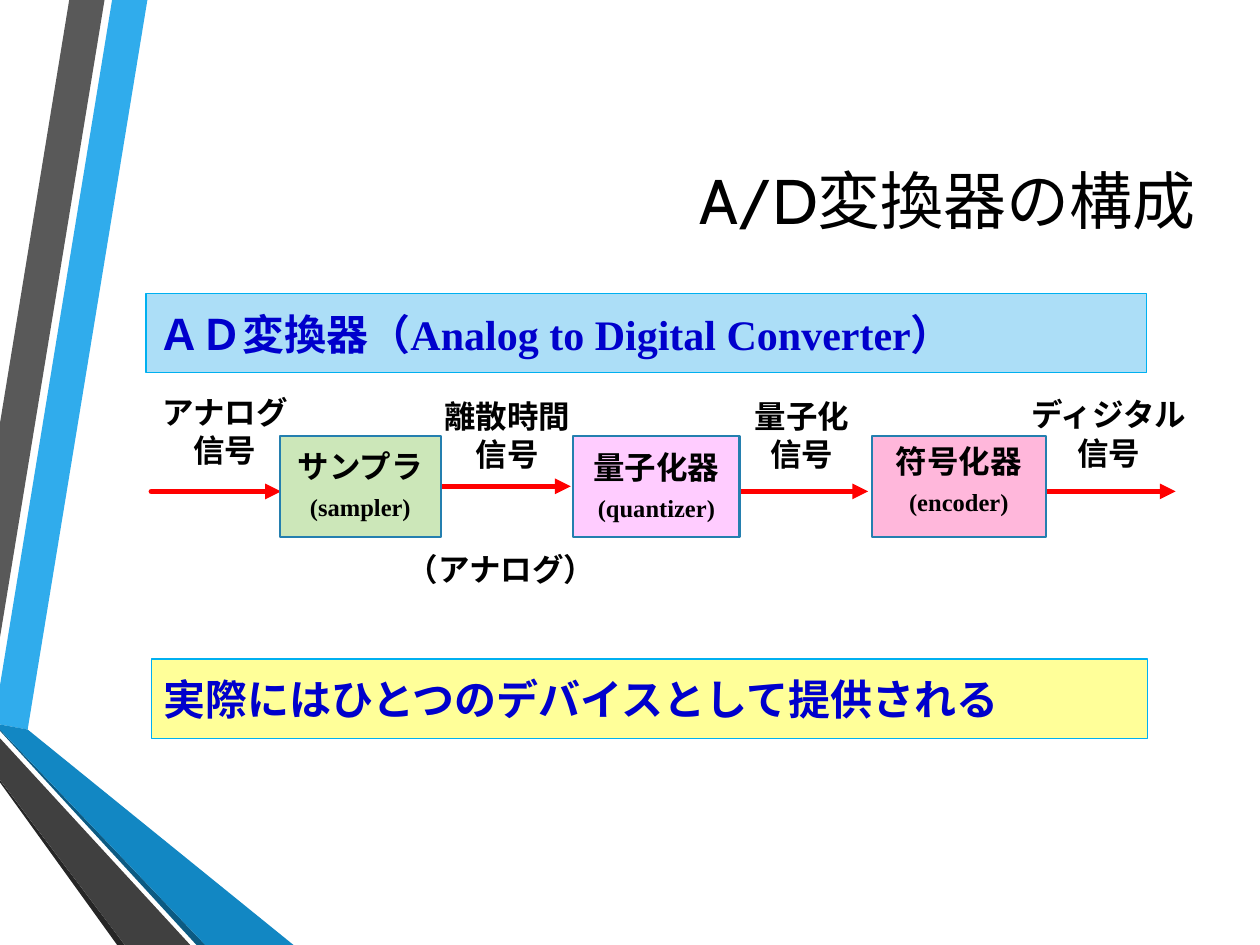
from lxml import etree
from pptx import Presentation
from pptx.dml.color import RGBColor
from pptx.enum.shapes import MSO_CONNECTOR, MSO_SHAPE
from pptx.enum.text import MSO_ANCHOR, PP_ALIGN
from pptx.oxml.ns import qn
from pptx.util import Inches, Pt

STRAIGHT = MSO_CONNECTOR.STRAIGHT
RECTANGLE = MSO_SHAPE.RECTANGLE
TOP, MIDDLE = MSO_ANCHOR.TOP, MSO_ANCHOR.MIDDLE
LEFT, CENTER, RIGHT = PP_ALIGN.LEFT, PP_ALIGN.CENTER, PP_ALIGN.RIGHT

WIDTH, HEIGHT = 10, 7.5
BLANK_LAYOUT = 6
BODY_FONT, TITLE_FONT = "Times New Roman", "Cabin"
BLACK, BLUE, RED = "000000", "0000CC", "FF0000"
BLOCK_EDGE, BANNER_EDGE = "247FAF", "00B0F0"
BLOCK_TOP, BLOCK_HEIGHT = 3.46, 0.8
BANNER_HEIGHT = 0.63
ARROW_LENGTH = 1.03
LABEL_HEIGHT = 0.55

RIBBONS = [
    ("30ACEC", [(0, 5.44), (0, 5.75), (0.22, 5.79), (1.17, 0), (0.89, 0)]),
    ("595959", [(0.83, 0), (0.55, 0), (0, 3.36), (0, 5.06)]),
    ("262626", [(0, 6.19), (0, 6.21), (0.93, HEIGHT), (0.99, HEIGHT)]),
    ("0C5A82", [(0, 5.79), (0, 5.8), (1.56, HEIGHT), (1.63, HEIGHT)]),
    ("1287C3", [(0, 5.79), (1.63, HEIGHT), (2.33, HEIGHT), (0.22, 5.79), (0, 5.75)]),
    ("404040", [(0, 6.19), (0.99, HEIGHT), (1.51, HEIGHT), (0, 5.86)]),
]
ARROWS = [(1.2, 3.9), (3.5, 3.86), (5.86, 3.9), (8.3, 3.9)]
BLOCKS = [
    (2.22, 1.28, "CCE7B9", 3.67, "サンプラ", "(sampler)"),
    (4.55, 1.32, "FFCCFF", 3.68, "量子化器", "(quantizer)"),
    (6.92, 1.38, "FFB7DB", 3.63, "符号化器", "(encoder)"),
]
LABELS = [
    (1.12, 3.23, 1.33, ["アナログ", "信号"]),
    (3.36, 3.26, 1.33, ["離散時間", "信号"]),
    (5.7, 3.26, 1.33, ["量子化", "信号"]),
    (8.02, 3.25, 1.56, ["ディジタル", "信号"]),
    (3, 4.48, 1.95, ["（アナログ）"]),
]
BANNERS = [
    (1.16, 2.33, 7.94, "ACDEF7", "ＡＤ変換器（Analog to Digital Converter）"),
    (1.2, 5.23, 7.91, "FFFF99", "実際にはひとつのデバイスとして提供される"),
]


def color(value):
    return RGBColor.from_string(value)


def paint(shape, fill, edge=None, weight=1):
    shape.shadow.inherit = False
    shape.fill.solid()
    shape.fill.fore_color.rgb = color(fill)
    if edge:
        shape.line.color.rgb = color(edge)
        shape.line.width = Pt(weight)
    else:
        shape.line.fill.background()


def add_ribbon(page, fill, points):
    corners = [(Inches(x), Inches(y)) for x, y in points]
    builder = page.shapes.build_freeform(*corners[0], scale=1.0)
    builder.add_line_segments(corners[1:], close=True)
    paint(builder.convert_to_shape(), fill)


def add_arrow(page, left, top):
    y = Inches(top)
    arrow = page.shapes.add_connector(
        STRAIGHT, Inches(left), y, Inches(left + ARROW_LENGTH), y)
    arrow.line.color.rgb = color(RED)
    arrow.line.width = Pt(3)
    line = arrow.line._get_or_add_ln()
    line.set("cap", "rnd")
    etree.SubElement(line, qn("a:tailEnd"), type="triangle")
    etree.SubElement(arrow._element.spPr, qn("a:effectLst"))


def add_rectangle(page, left, top, width, height, fill, edge, weight):
    box = page.shapes.add_shape(
        RECTANGLE, Inches(left), Inches(top), Inches(width), Inches(height))
    paint(box, fill, edge, weight)
    return box


def add_text_box(page, left, top, width, height):
    return page.shapes.add_textbox(
        Inches(left), Inches(top), Inches(width), Inches(height))


def write(box, lines, sizes=(18, 18), font=BODY_FONT, ink=BLACK, bold=True,
          align=CENTER, anchor=TOP, spacing=None, gap=6):
    frame = box.text_frame
    frame.word_wrap = True
    frame.vertical_anchor = anchor
    for index, (text, size) in enumerate(zip(lines, sizes)):
        para = frame.add_paragraph() if index else frame.paragraphs[0]
        para.alignment = align
        para.space_before = para.space_after = Pt(gap)
        if spacing:
            para.line_spacing = Pt(spacing)
        span = para.add_run()
        span.text = text
        span.font.name = font
        span.font.size = Pt(size)
        span.font.bold = bold
        span.font.color.rgb = color(ink)


def add_block(page, left, width, fill, text_top, name, english):
    add_rectangle(page, left, BLOCK_TOP, width, BLOCK_HEIGHT, fill, BLOCK_EDGE, 1.25)
    box = add_text_box(page, left, text_top, width, LABEL_HEIGHT)
    write(box, [name, english], sizes=(18, 14), spacing=9)


def add_label(page, left, top, width, lines):
    box = add_text_box(page, left, top, width, LABEL_HEIGHT)
    write(box, lines, spacing=10)


def add_banner(page, left, top, width, fill, text):
    box = add_rectangle(page, left, top, width, BANNER_HEIGHT, fill, BANNER_EDGE, 0.75)
    write(box, [text], sizes=[24], ink=BLUE, align=LEFT, spacing=33.6)


def add_title(page, text):
    box = add_text_box(page, 1.16, 0.5, 8.43, 2.17)
    write(box, [text], sizes=[36], font=TITLE_FONT, bold=False,
          align=RIGHT, anchor=MIDDLE, gap=0)


def main():
    deck = Presentation()
    deck.slide_width, deck.slide_height = Inches(WIDTH), Inches(HEIGHT)
    page = deck.slides.add_slide(deck.slide_layouts[BLANK_LAYOUT])
    for ribbon in RIBBONS:
        add_ribbon(page, *ribbon)
    for arrow in ARROWS:
        add_arrow(page, *arrow)
    add_title(page, "A/D変換器の構成")
    for block in BLOCKS:
        add_block(page, *block)
    for label in LABELS:
        add_label(page, *label)
    for banner in BANNERS:
        add_banner(page, *banner)
    deck.save("out.pptx")


if __name__ == "__main__":
    main()
